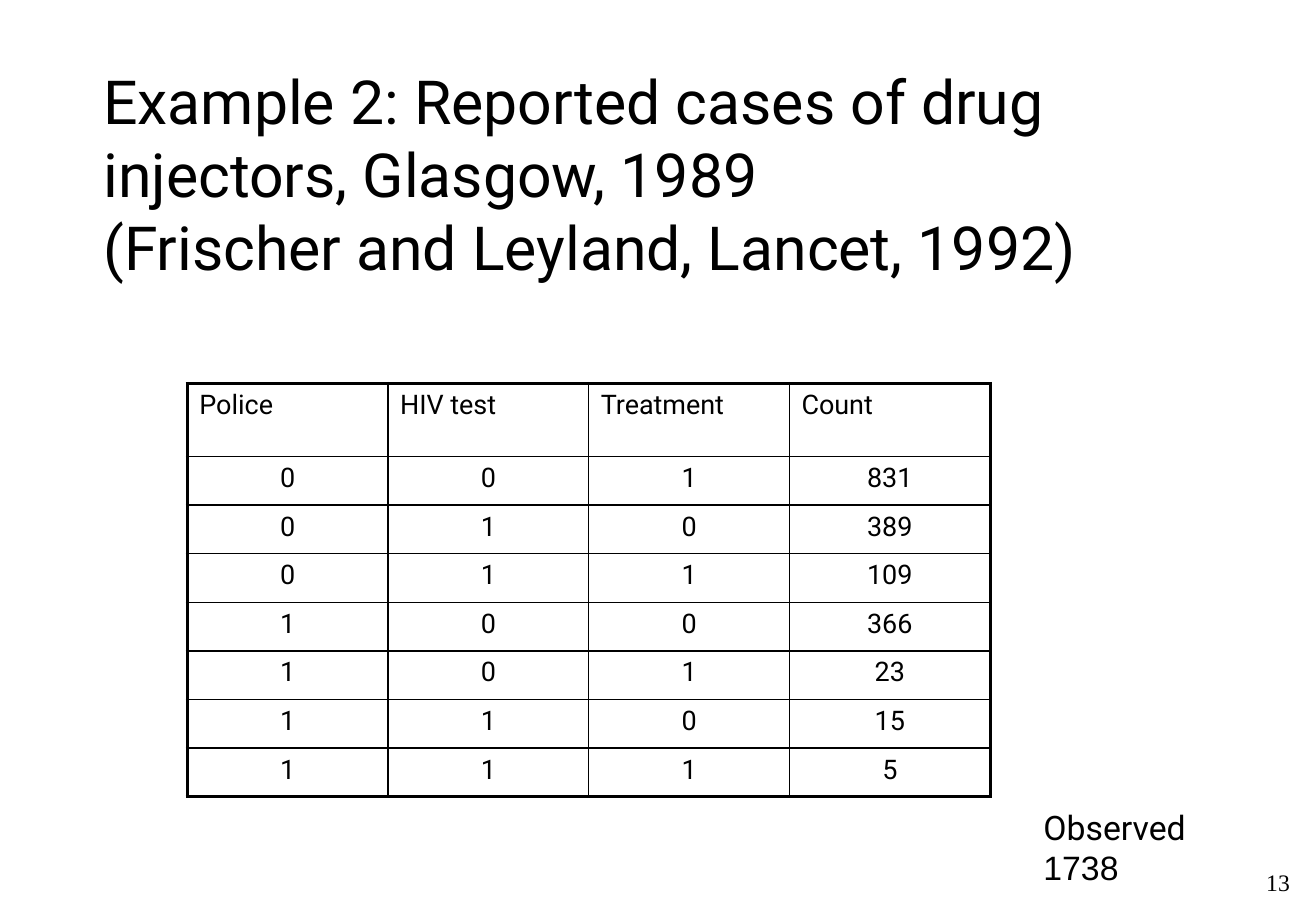
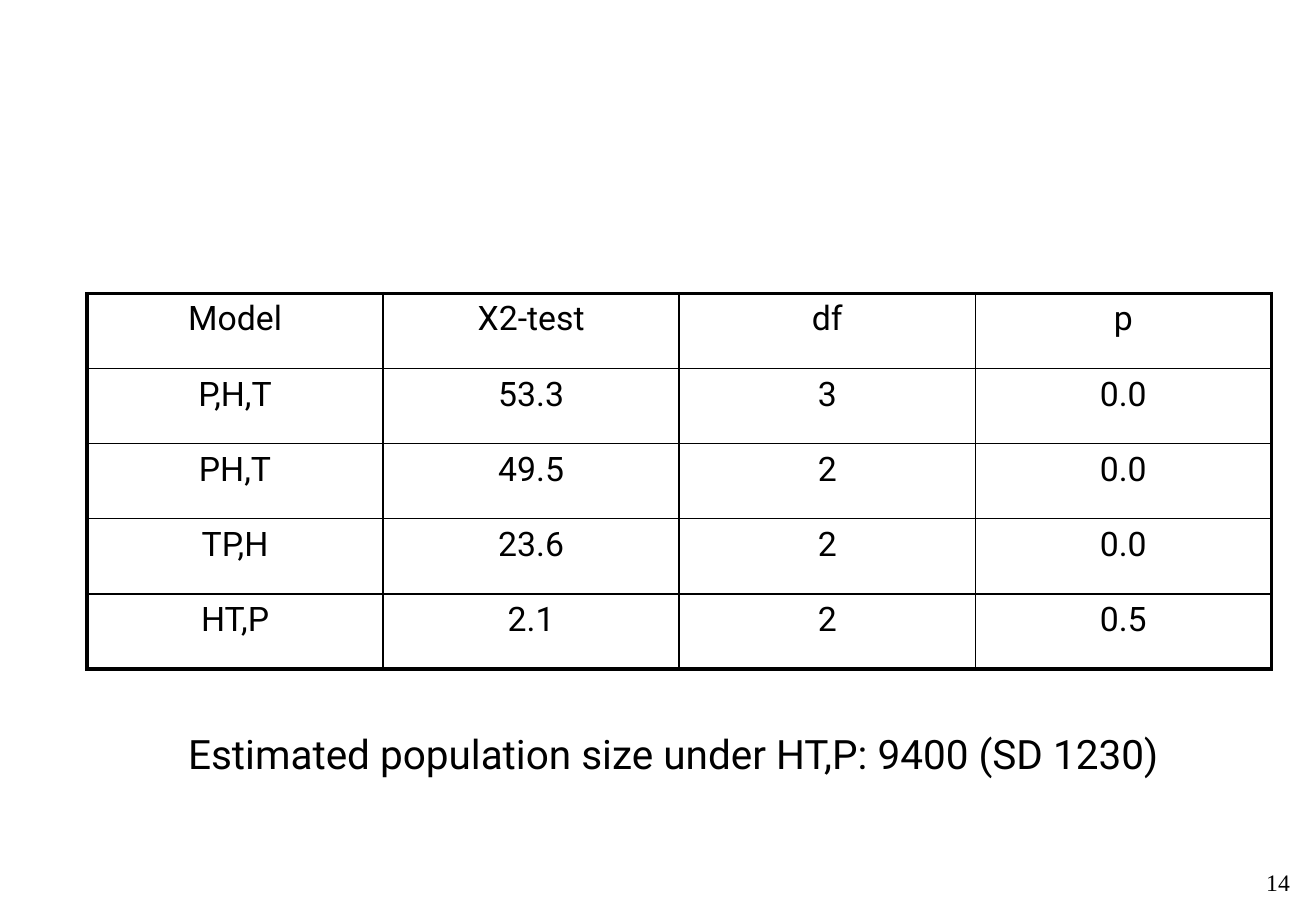
from dataclasses import dataclass

from lxml import etree
from pptx import Presentation
from pptx.dml.color import RGBColor
from pptx.enum.text import MSO_ANCHOR, MSO_AUTO_SIZE, PP_ALIGN
from pptx.oxml.ns import qn
from pptx.util import Emu, Inches, Pt

LEFT, CENTER, RIGHT = PP_ALIGN.LEFT, PP_ALIGN.CENTER, PP_ALIGN.RIGHT
TOP, MIDDLE, BOTTOM = MSO_ANCHOR.TOP, MSO_ANCHOR.MIDDLE, MSO_ANCHOR.BOTTOM
NO_AUTOFIT = MSO_AUTO_SIZE.NONE

GRID_COLUMNS, GRID_ROWS = 130, 90
GRID_UNIT = Inches(1) // 12
TITLE_ONLY, BLANK = 5, 6


@dataclass(frozen=True)
class Theme:
    ink: str = "000000"
    paper: str = "FFFFFF"
    main_font: str = "Roboto"
    figure_font: str = "Arial"
    number_font: str = "Times New Roman"
    title_size: int = 36
    statement_size: int = 24
    body_size: int = 20
    small_size: int = 16
    number_size: int = 14
    outer_border: float = 2.25
    inner_border: float = 1


def grid(units):
    return Emu(round(units * GRID_UNIT))


def set_all(target, values):
    for name, value in values.items():
        setattr(target, name, value)


class SlideBuilder:
    def __init__(self, deck, theme):
        self.deck = deck
        self.theme = theme
        self.page = None

    def start_page(self, number, title_lines=None):
        layout = TITLE_ONLY if title_lines else BLANK
        self.page = self.deck.slides.add_slide(self.deck.slide_layouts[layout])
        fill = self.page.background.fill
        fill.solid()
        fill.fore_color.rgb = RGBColor.from_string(self.theme.paper)
        self.text((122.2, 85.1, 6.4, 4), [(str(number), self.theme.number_font)],
                  self.theme.number_size, RIGHT, MIDDLE)
        if title_lines:
            self.title(title_lines)

    def fill_para(self, para, spans, size, align):
        """Fill a paragraph with (text, font name) spans; None is a line break."""
        para.alignment = align
        for item in spans:
            if item is None:
                para.add_line_break()
                continue
            span = para.add_run()
            span.text, font_name = item
            set_all(span.font, {"name": font_name, "size": Pt(size), "bold": False})
            span.font.color.rgb = RGBColor.from_string(self.theme.ink)

    def frame(self, box, anchor):
        """Format the text frame of a box and return its first paragraph."""
        set_all(box.text_frame, {
            "word_wrap": True, "auto_size": NO_AUTOFIT, "vertical_anchor": anchor,
            "margin_left": Inches(0.1), "margin_right": Inches(0.1),
            "margin_top": Inches(0.05), "margin_bottom": Inches(0.05)})
        return box.text_frame.paragraphs[0]

    def title(self, lines):
        box = self.page.shapes.title
        set_all(box, {"left": grid(9), "top": grid(14.5),
                      "width": grid(101.5), "height": grid(14)})
        spans = []
        for line in lines:
            spans += [None] if spans else []
            spans.append((line, self.theme.main_font))
        self.fill_para(self.frame(box, BOTTOM), spans, self.theme.title_size, LEFT)

    def text(self, place, spans, size, align=LEFT, anchor=TOP):
        box = self.page.shapes.add_textbox(*map(grid, place))
        self.fill_para(self.frame(box, anchor), spans, size, align)

    def border(self, cell, side, width):
        properties = cell._tc.get_or_add_tcPr()
        line = etree.SubElement(properties, qn(f"a:ln{side}"), w=str(Pt(width)))
        fill = etree.SubElement(line, qn("a:solidFill"))
        etree.SubElement(fill, qn("a:srgbClr"), val=self.theme.ink)

    def table(self, corner, column_width, row_heights, rows, size, header_align=CENTER):
        """Draw a ruled table with a heavier outline around it."""
        row_count, column_count = len(rows), len(rows[0])
        place = (*corner, column_width * column_count, sum(row_heights))
        table = self.page.shapes.add_table(row_count, column_count, *map(grid, place)).table
        set_all(table, {"first_row": False, "horz_banding": False})
        for column in table.columns:
            column.width = grid(column_width)
        for r, values in enumerate(rows):
            table.rows[r].height = grid(row_heights[r])
            for c, value in enumerate(values):
                cell = table.cell(r, c)
                on_edge = {"L": c == 0, "R": c == column_count - 1,
                           "T": r == 0, "B": r == row_count - 1}
                for side, outer in on_edge.items():
                    width = self.theme.outer_border if outer else self.theme.inner_border
                    self.border(cell, side, width)
                cell.fill.background()
                cell.vertical_anchor = TOP
                self.fill_para(cell.text_frame.paragraphs[0],
                               [(value, self.theme.main_font)],
                               size, CENTER if r else header_align)


CASE_ROWS = [
    ("Police", "HIV test", "Treatment", "Count"),
    ("0", "0", "1", "831"),
    ("0", "1", "0", "389"),
    ("0", "1", "1", "109"),
    ("1", "0", "0", "366"),
    ("1", "0", "1", "23"),
    ("1", "1", "0", "15"),
    ("1", "1", "1", "5"),
]
MODEL_ROWS = [
    ("Model", "X2-test", "df", "p"),
    ("P,H,T", "53.3", "3", "0.0"),
    ("PH,T", "49.5", "2", "0.0"),
    ("TP,H", "23.6", "2", "0.0"),
    ("HT,P", "2.1", "2", "0.5"),
]


def main():
    deck = Presentation()
    set_all(deck, {"slide_width": grid(GRID_COLUMNS), "slide_height": grid(GRID_ROWS)})
    theme = Theme()
    builder = SlideBuilder(deck, theme)

    builder.start_page(13, ["Example 2: Reported cases of drug injectors, Glasgow, 1989",
                            "(Frischer and Leyland, Lancet, 1992)"])
    builder.table((18.5, 37.9), 19.83, [7.2] + [4.8] * 7, CASE_ROWS,
                  theme.small_size, header_align=LEFT)
    builder.text((101.9, 79.1, 24, 9),
                 [("Observed", theme.main_font), (" 1738", theme.figure_font)],
                 theme.body_size)

    builder.start_page(14)
    builder.table((8.6, 29), 29.25, [7.42] * 5, MODEL_ROWS, theme.body_size)
    builder.text((17.4, 71.4, 99.6, 6),
                 [("Estimated population size under HT,P: 9400 (SD 1230)", theme.main_font)],
                 theme.statement_size)

    deck.save("out.pptx")


if __name__ == "__main__":
    main()
